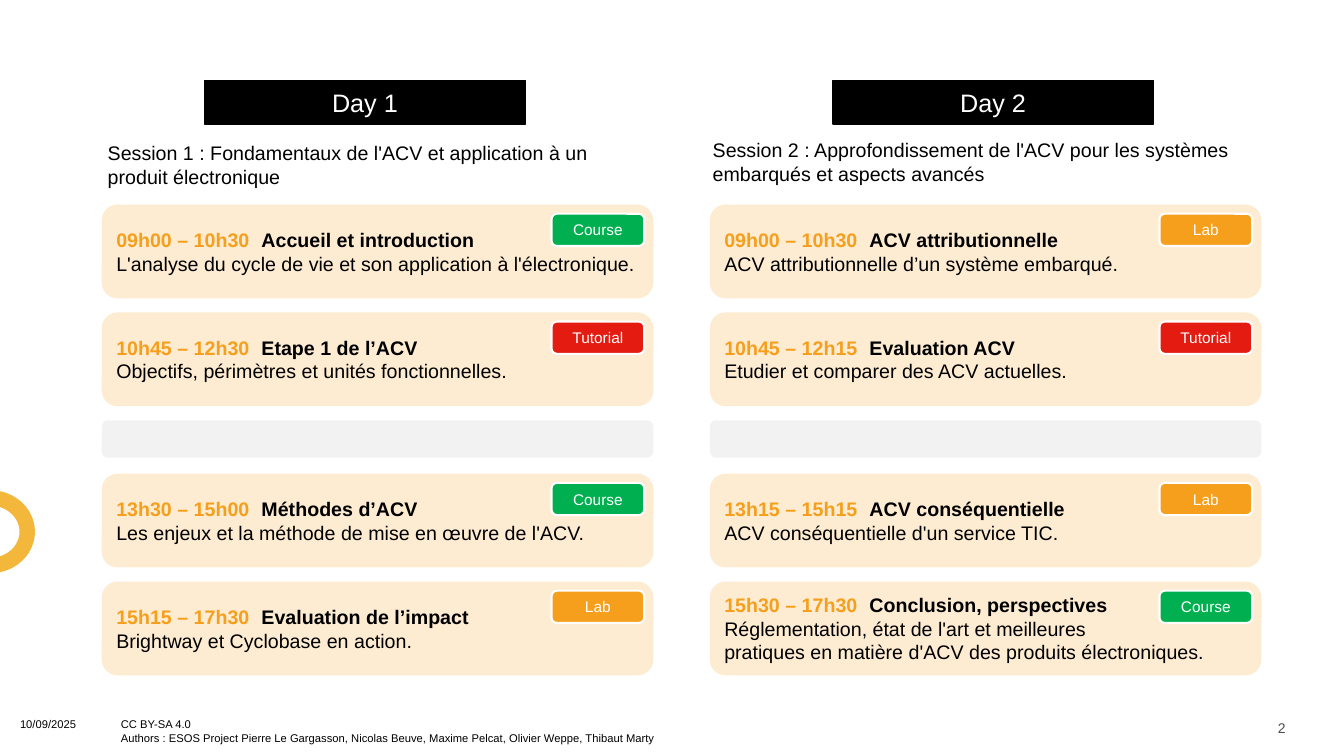
from dataclasses import dataclass
from enum import Enum

from lxml import etree
from pptx import Presentation
from pptx import util as u
from pptx.dml.color import RGBColor
from pptx.enum import shapes, text
from pptx.oxml import ns

PX = 9144  # EMU per px, 100 px to the inch
FONT = "Arial"

BLACK = RGBColor(0x00, 0x00, 0x00)
WHITE = RGBColor(0xFF, 0xFF, 0xFF)
GREY = RGBColor(0x4D, 0x4D, 0x4D)
PALE_GREY = RGBColor(0xF2, 0xF2, 0xF2)
CREAM = RGBColor(0xFD, 0xEC, 0xD2)
ORANGE = RGBColor(0xF6, 0x9F, 0x1D)
GREEN = RGBColor(0x00, 0xB0, 0x50)
RED = RGBColor(0xE3, 0x1B, 0x11)
GOLD = RGBColor(0xF3, 0xB7, 0x3B)

RECT = shapes.MSO_SHAPE.RECTANGLE
ROUNDED = shapes.MSO_SHAPE.ROUNDED_RECTANGLE
OVAL = shapes.MSO_SHAPE.OVAL

CARD_TOP, CARD_W, CARD_H = 203, 547, 93
CARD_PITCH = 107
MORNING_SLOTS = 2
BREAK_H, BREAK_PITCH = 37, 53
BADGE_DX, BADGE_DY = 446, 9
TITLE_TAB = 144
FOOTER_TAB = 100


@dataclass(frozen=True)
class Box:
    x: int
    y: int
    w: int
    h: int

    def emu(self) -> tuple[int, int, int, int]:
        return self.x * PX, self.y * PX, self.w * PX, self.h * PX


class Kind(Enum):
    COURSE = ("Course", GREEN)
    TUTORIAL = ("Tutorial", RED)
    LAB = ("Lab", ORANGE)


@dataclass(frozen=True)
class Slot:
    hours: str
    title: str
    details: tuple[str, ...]
    kind: Kind


@dataclass(frozen=True)
class Day:
    name: str
    name_x: int
    session: str
    session_box: Box
    cards_x: int
    slots: tuple[Slot, ...]


DAYS = (
    Day("Day 1", 203,
        "Session 1 : Fondamentaux de l'ACV et application à un produit électronique",
        Box(97, 135, 552, 57), 101, (
            Slot("09h00 – 10h30", "Accueil et introduction",
                 ("L'analyse du cycle de vie et son application à l'électronique.",), Kind.COURSE),
            Slot("10h45 – 12h30", "Etape 1 de l’ACV",
                 ("Objectifs, périmètres et unités fonctionnelles.",), Kind.TUTORIAL),
            Slot("13h30 – 15h00", "Méthodes d’ACV",
                 ("Les enjeux et la méthode de mise en œuvre de l'ACV.",), Kind.COURSE),
            Slot("15h15 – 17h30", "Evaluation de l’impact",
                 ("Brightway et Cyclobase en action.",), Kind.LAB),
        )),
    Day("Day 2", 826,
        "Session 2 : Approfondissement de l'ACV pour les systèmes embarqués et aspects avancés",
        Box(697, 132, 555, 57), 704, (
            Slot("09h00 – 10h30", "ACV attributionnelle",
                 ("ACV attributionnelle d’un système embarqué.",), Kind.LAB),
            Slot("10h45 – 12h15", "Evaluation ACV",
                 ("Etudier et comparer des ACV actuelles.",), Kind.TUTORIAL),
            Slot("13h15 – 15h15", "ACV conséquentielle",
                 ("ACV conséquentielle d'un service TIC.",), Kind.LAB),
            Slot("15h30 – 17h30", "Conclusion, perspectives",
                 ("Réglementation, état de l'art et meilleures",
                  "pratiques en matière d'ACV des produits électroniques."), Kind.COURSE),
        )),
)

FOOTER = (
    "10/09/2025\tCC BY-SA 4.0\n"
    "\tAuthors : ESOS Project Pierre Le Gargasson, Nicolas Beuve, "
    "Maxime Pelcat, Olivier Weppe, Thibaut Marty"
)


def style_run(r, size: int, color: RGBColor, bold: bool = False) -> None:
    r.font.name = FONT
    r.font.size = u.Pt(size)
    r.font.color.rgb = color
    r.font.bold = bold


def add_tab(p, px: int) -> None:
    """Put one left tab stop, measured from the text's left edge."""
    tabs = etree.SubElement(p._p.get_or_add_pPr(), ns.qn("a:tabLst"))
    etree.SubElement(tabs, ns.qn("a:tab"), pos=str(px * PX), algn="l")


def write(tf, words: str, size: int, color: RGBColor,
          align=text.PP_ALIGN.LEFT, tab: int | None = None) -> None:
    tf.text = words
    tf.word_wrap = True
    for p in tf.paragraphs:
        p.alignment = align
        if tab:
            add_tab(p, tab)
        for r in p.runs:
            style_run(r, size, color)


def add_text(s, box: Box, words: str, size: int, color: RGBColor, **layout) -> None:
    write(s.shapes.add_textbox(*box.emu()).text_frame, words, size, color, **layout)


def add_block(s, preset, box: Box, fill: RGBColor | None,
              line: RGBColor | None = None, line_pt: float = 1):
    sp = s.shapes.add_shape(preset, *box.emu())
    sp.shadow.inherit = False
    if fill is None:
        sp.fill.background()
    else:
        sp.fill.solid()
        sp.fill.fore_color.rgb = fill
    if line is None:
        sp.line.fill.background()
    else:
        sp.line.color.rgb = line
        sp.line.width = u.Pt(line_pt)
    sp.text_frame.vertical_anchor = text.MSO_ANCHOR.MIDDLE
    return sp


def add_slot(s, slot: Slot, x: int, y: int) -> None:
    tf = add_block(s, ROUNDED, Box(x, y, CARD_W, CARD_H), CREAM).text_frame
    write(tf, "\n".join((slot.hours + "\t", *slot.details)), 14, BLACK)
    p = tf.paragraphs[0]
    add_tab(p, TITLE_TAB)
    style_run(p.runs[0], 14, ORANGE, bold=True)
    r = p.add_run()
    r.text = slot.title
    style_run(r, 14, BLACK, bold=True)

    label, color = slot.kind.value
    badge = add_block(s, ROUNDED, Box(x + BADGE_DX, y + BADGE_DY, 92, 32), color, WHITE, 1.5)
    write(badge.text_frame, label, 11, WHITE, text.PP_ALIGN.CENTER)


def add_day(s, day: Day) -> None:
    header = add_block(s, RECT, Box(day.name_x, 80, 318, 43), BLACK, BLACK)
    write(header.text_frame, day.name, 18, WHITE, text.PP_ALIGN.CENTER)
    add_text(s, day.session_box, day.session, 14, BLACK)

    y = CARD_TOP
    for i, slot in enumerate(day.slots):
        if i == MORNING_SLOTS:
            add_block(s, ROUNDED, Box(day.cards_x, y, CARD_W, BREAK_H), PALE_GREY)
            y += BREAK_PITCH
        add_slot(s, slot, day.cards_x, y)
        y += CARD_PITCH


def main() -> None:
    prs = Presentation()
    prs.slide_width, prs.slide_height = 1333 * PX, 750 * PX
    s = prs.slides.add_slide(prs.slide_layouts[6])
    add_text(s, Box(10, 707, 672, 37), FOOTER, 8, BLACK, tab=FOOTER_TAB)
    add_block(s, OVAL, Box(-46, 494, 73, 67), None, GOLD, 11)
    add_text(s, Box(985, 709, 300, 27), "2", 10, GREY, align=text.PP_ALIGN.RIGHT)
    for day in DAYS:
        add_day(s, day)
    prs.save("out.pptx")


if __name__ == "__main__":
    main()
